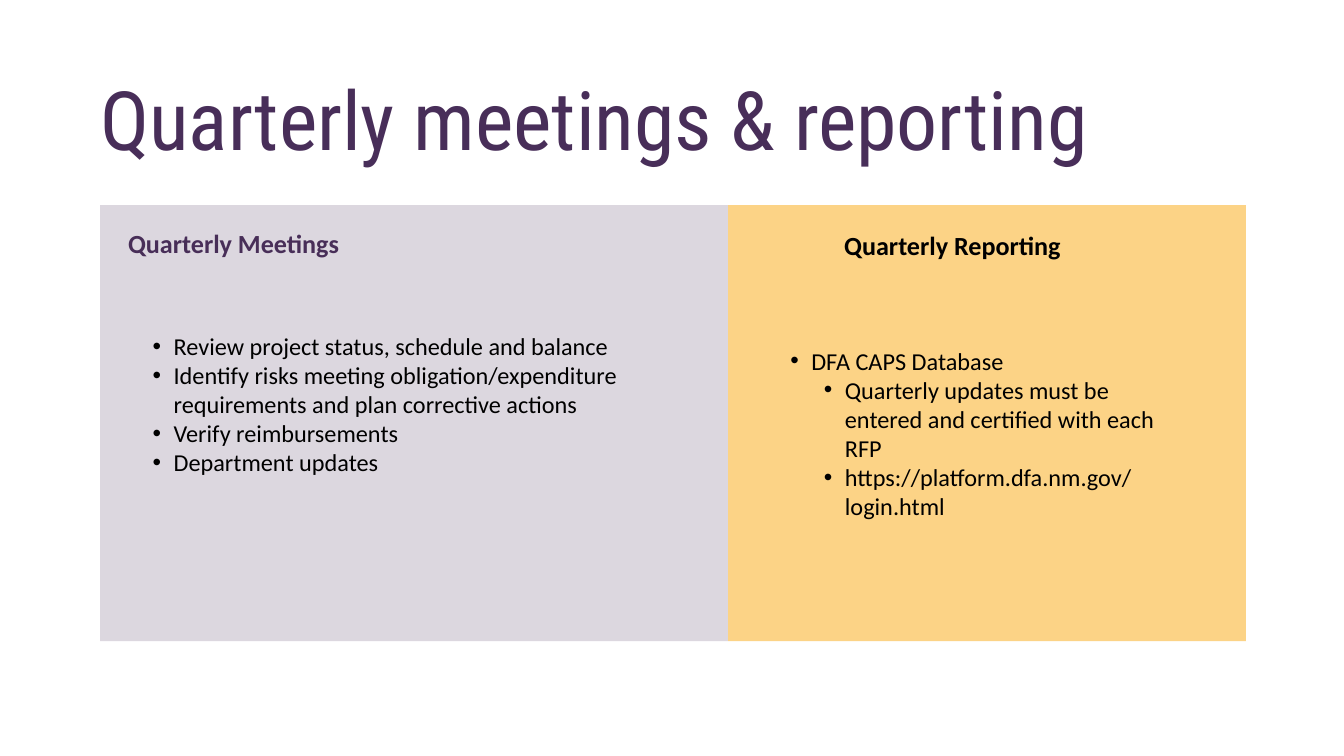
"""Build the quarterly meetings and reporting slide."""
from lxml.etree import SubElement
from pptx import Presentation
from pptx.dml.color import RGBColor
from pptx.enum.shapes import MSO_SHAPE
from pptx.enum.text import MSO_ANCHOR, MSO_AUTO_SIZE, PP_ALIGN
from pptx.oxml.ns import qn
from pptx.util import Pt

PX = 9525
PURPLE = RGBColor(0x48, 0x2E, 0x58)
TITLE_PURPLE = RGBColor(0x48, 0x2E, 0x59)
YELLOW = RGBColor(0xFC, 0xD3, 0x86)
BLACK = RGBColor(0x00, 0x00, 0x00)

TITLE = "Quarterly meetings & reporting"
TITLE_BOX = (143, 128, 1598, 111)
TITLE_FONT = {"name": "Roboto Condensed", "size": Pt(87.7), "bold": False}
HEADING_FONT = {"name": "Calibri", "size": Pt(28), "bold": True}
ITEM_FONT = {"name": "Calibri", "size": Pt(26), "bold": False}
BULLET_HANG = 30
LEVEL_STEP = 48
ITEM_INSETS = (10, 5)

COLUMNS = [
    {
        "panel": (143, 293, 897, 623), "fill": PURPLE, "opacity": 19,
        "heading": "Quarterly Meetings", "heading_color": PURPLE,
        "heading_box": (183, 325, 444, 45),
        "items_box": (208, 468, 808, 346),
        "items": [
            (0, "Review project status, schedule and balance"),
            (0, "Identify risks meeting obligation/expenditure "
                "requirements and plan corrective actions"),
            (0, "Verify reimbursements"),
            (0, "Department updates"),
        ],
    },
    {
        "panel": (1040, 293, 740, 623), "fill": YELLOW, "opacity": 100,
        "heading": "Quarterly Reporting", "heading_color": BLACK,
        "heading_box": (1206, 327, 444, 45),
        "items_box": (1119, 489, 583, 304),
        "items": [
            (0, "DFA CAPS Database"),
            (1, "Quarterly updates must be entered and certified with each RFP"),
            (1, "https://platform.dfa.nm.gov/login.html"),
        ],
    },
]


def emu(box):
    return [length * PX for length in box]


def set_all(target, values):
    for key, value in values.items():
        setattr(target, key, value)


def place(placeholder, box, insets=(0, 0)):
    set_all(placeholder, dict(zip(("left", "top", "width", "height"), emu(box))))
    side, end = emu(insets)
    frame = placeholder.text_frame
    set_all(frame, {
        "margin_left": side, "margin_right": side,
        "margin_top": end, "margin_bottom": end,
        "word_wrap": True, "auto_size": MSO_AUTO_SIZE.NONE,
        "vertical_anchor": MSO_ANCHOR.TOP,
    })
    return frame


def write(paragraph, text, font, color):
    paragraph.text = text
    set_all(paragraph, {"alignment": PP_ALIGN.LEFT, "space_before": Pt(0)})
    set_all(paragraph.font, font)
    paragraph.font.color.rgb = color


def add_bullet(paragraph, level):
    paragraph.level = level
    properties = paragraph._p.get_or_add_pPr()
    properties.set("marL", str((BULLET_HANG + level * LEVEL_STEP) * PX))
    properties.set("indent", str(-BULLET_HANG * PX))
    SubElement(properties, qn("a:buFont"), typeface="Arial")
    SubElement(properties, qn("a:buChar"), char="•")


def add_panel(slide, column):
    panel = slide.shapes.add_shape(MSO_SHAPE.RECTANGLE, *emu(column["panel"]))
    panel.shadow.inherit = False
    panel.line.fill.background()
    panel.fill.solid()
    panel.fill.fore_color.rgb = column["fill"]
    if column["opacity"] < 100:
        color = panel._element.spPr.find(".//" + qn("a:srgbClr"))
        SubElement(color, qn("a:alpha"), val=str(column["opacity"] * 1000))
    slide.shapes.title._element.addprevious(panel._element)


def fill_column(slide, column, heading, items):
    add_panel(slide, column)
    heading_frame = place(heading, column["heading_box"])
    write(heading_frame.paragraphs[0], column["heading"], HEADING_FONT,
          column["heading_color"])
    items_frame = place(items, column["items_box"], ITEM_INSETS)
    for index, (level, text) in enumerate(column["items"]):
        item = items_frame.add_paragraph() if index else items_frame.paragraphs[0]
        add_bullet(item, level)
        write(item, text, ITEM_FONT, BLACK)


def main():
    deck = Presentation()
    deck.slide_width, deck.slide_height = emu((1920, 1080))
    slide = deck.slides.add_slide(deck.slide_layouts.get_by_name("Comparison"))
    title, *bodies = slide.placeholders
    title_line = place(title, TITLE_BOX).paragraphs[0]
    write(title_line, TITLE, TITLE_FONT, TITLE_PURPLE)
    title_line.line_spacing = Pt(83.3)
    for column, heading, items in zip(COLUMNS, bodies[::2], bodies[1::2]):
        fill_column(slide, column, heading, items)
    deck.save("out.pptx")


if __name__ == "__main__":
    main()
